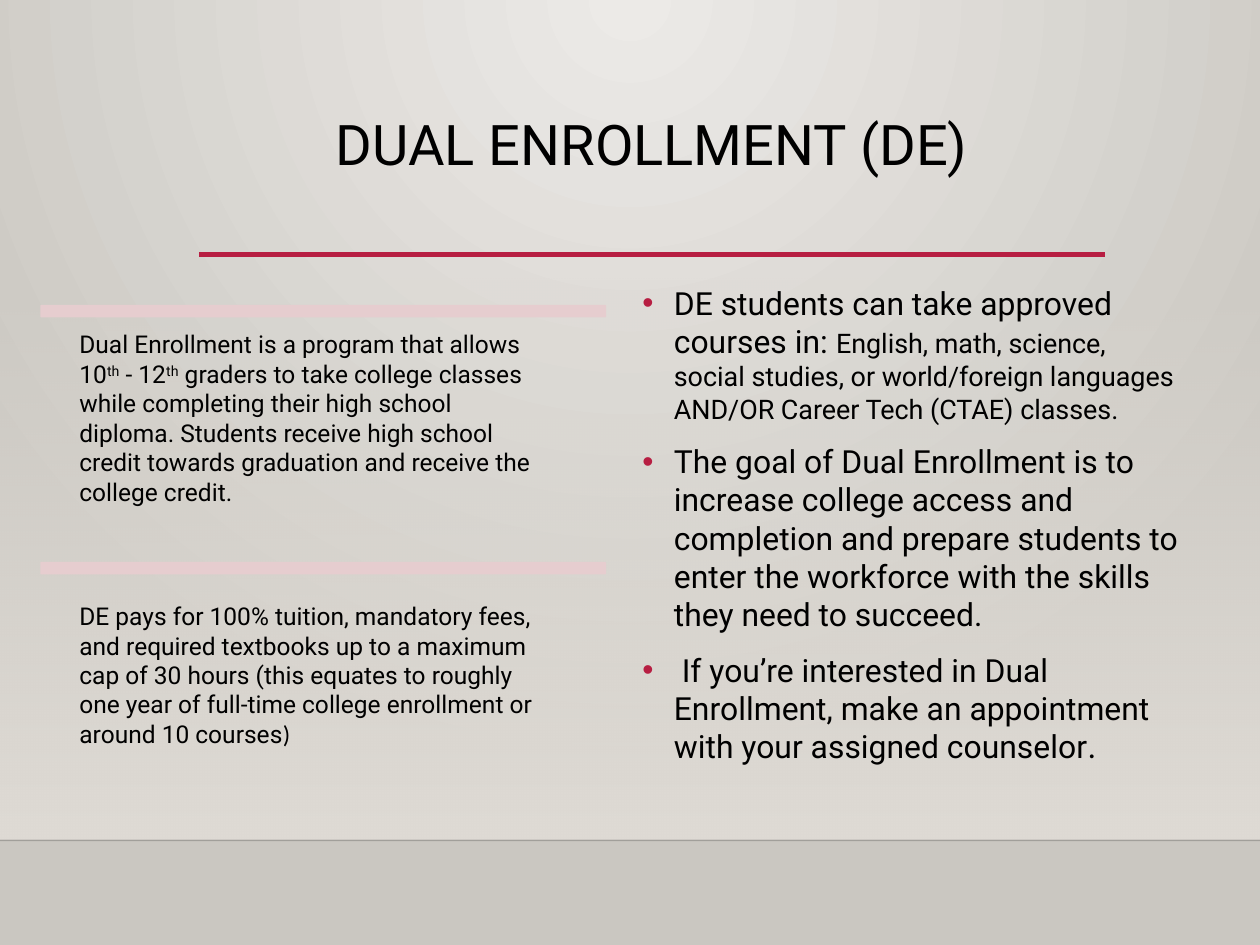
import dataclasses
import pptx
import pptx.dml.color
import pptx.enum.shapes
import pptx.enum.text
import pptx.oxml
import pptx.oxml.ns
import pptx.util


@dataclasses.dataclass(frozen=True)
class Theme:
    """Colours, fonts and type sizes of the slide."""
    ink: str = "000000"
    accent: str = "B71E42"
    bar: str = "E6CDCF"
    light: str = "ECEAE7"
    dark: str = "CAC7C1"
    wall: str = "DFDBD5"
    edge: str = "000001"
    font: str = "Roboto"
    alt: str = "Calibri"
    title: float = 32
    note: float = 14
    body: float = 18.2
    small: float = 15.4


THEME = Theme()
NOTES = [
    [("Dual Enrollment is a program that allows 10", {}), ("th", {"rise": 30}),
     (" - 12", {}), ("th", {"rise": 30}),
     (" graders to take college classes while completing their high school diploma. "
      "Students receive high school credit towards graduation and receive the college credit.", {})],
    [("DE pays for 100% tuition, mandatory fees, and required textbooks up to a maximum cap of "
      "30 hours (this equates to roughly one year of full-time college enrollment or around "
      "10 courses", {}), (")", {"font": THEME.alt})],
]
POINTS = [
    [("DE students can take approved courses in: ", {}),
     ("English, math, science, social studies, or world/foreign languages AND/OR Career Tech "
      "(CTAE) classes.", {"size": THEME.small})],
    [("The goal of Dual Enrollment is to increase college access and completion and prepare "
      "students to enter the workforce with the skills they need to succeed.", {})],
    [(" If you’re interested in Dual Enrollment, make an appointment with your assigned "
      "counselor", {}), (".", {"font": THEME.alt})],
]


def px(count):
    """Turn px, 100 to the inch, into EMU."""
    return pptx.util.Emu(count * 9144)


def rgb(code):
    """Turn a hex code into a colour."""
    return pptx.dml.color.RGBColor.from_string(code)


def xml(text):
    """Build a DrawingML element from its markup."""
    space = pptx.oxml.ns.nsdecls("a")
    return pptx.oxml.parse_xml(text.replace(">", f" {space}>", 1))


def blend(root, stops, shade):
    """Swap the solid fill under root for a gradient."""
    marks = "".join(
        f'<a:gs pos="{at * 1000}"><a:srgbClr val="{code}"><a:alpha val="{alpha * 1000}"/>'
        f'</a:srgbClr></a:gs>' for at, code, alpha in stops)
    fill = root.xpath(".//a:solidFill")[0]
    fill.getparent().replace(fill, xml(
        f'<a:gradFill rotWithShape="1"><a:gsLst>{marks}</a:gsLst>{shade}</a:gradFill>'))


def block(slide, box, kind, code):
    """Draw a flat shape without outline."""
    shape = slide.shapes.add_shape(kind, *map(px, box))
    shape.shadow.inherit = False
    shape.fill.solid()
    shape.fill.fore_color.rgb = rgb(code)
    shape.line.fill.background()
    return shape


def rule(slide, left, top, width, code, weight):
    """Draw a level line."""
    line = slide.shapes.add_connector(
        pptx.enum.shapes.MSO_CONNECTOR.STRAIGHT, px(left), px(top), px(left + width), px(top))
    line.line.color.rgb = rgb(code)
    line.line.width = pptx.util.Pt(weight)
    line.element.spPr.append(xml("<a:effectLst></a:effectLst>"))
    return line


def frame(slide, box, pad, anchor):
    """Add a wrapping text box and return its text frame."""
    text = slide.shapes.add_textbox(*map(px, box)).text_frame
    text.word_wrap = True
    text.vertical_anchor = anchor
    text.margin_left = text.margin_right = px(pad[0])
    text.margin_top = text.margin_bottom = px(pad[1])
    return text


def write(para, runs, size):
    """Add runs to a paragraph, each with its own changes."""
    for words, change in runs:
        run = para.add_run()
        run.text = words
        run.font.size = pptx.util.Pt(change.get("size", size))
        run.font.name = change.get("font", THEME.font)
        run.font.color.rgb = rgb(THEME.ink)
        if "rise" in change:
            run.font._element.set("baseline", str(change["rise"] * 1000))


def room(slide, box):
    """Paint the backdrop: glow, wall and floor edge."""
    left, top, width, height = box
    slide.background.fill.solid()
    blend(slide.element, [(0, THEME.light, 100), (100, THEME.dark, 100)],
          '<a:path path="circle"><a:fillToRect l="43000" t="0" r="43000" b="100000"/></a:path>')
    wall = block(slide, (left, top + 220, width, 446),
                 pptx.enum.shapes.MSO_SHAPE.RECTANGLE, THEME.wall)
    blend(wall.element, [(0, THEME.wall, 0), (100, THEME.wall, 100)],
          '<a:lin ang="5400000" scaled="0"/>')
    edge = rule(slide, left, top + 667, width, THEME.edge, 1)
    edge.element.xpath(".//a:ln//a:srgbClr")[0].append(xml('<a:alpha val="20000"></a:alpha>'))


def head(slide, box):
    """Place the title and the rule below it."""
    left, top, width, height = box
    rule(slide, left, top + height - 2, width, THEME.accent, 2.5)
    text = frame(slide, box, (10, 5), pptx.enum.text.MSO_ANCHOR.TOP)
    para = text.paragraphs[0]
    para.alignment = pptx.enum.text.PP_ALIGN.CENTER
    para.line_spacing = 0.9
    write(para, [("DUAL ENROLLMENT (DE)", {})], THEME.title)


def notes(slide, box):
    """Stack the notes, each under its bar."""
    left, top, width, height = box
    for row, runs in enumerate(NOTES):
        place = top + row * 204
        bar = block(slide, (left, place, width, 10),
                    pptx.enum.shapes.MSO_SHAPE.ROUNDED_RECTANGLE, THEME.bar)
        bar.adjustments[0] = 0.1
        text = frame(slide, (left + 12, place, width - 42, height - 204), (19, 19),
                     pptx.enum.text.MSO_ANCHOR.MIDDLE)
        write(text.paragraphs[0], runs, THEME.note)


def points(slide, box):
    """List the bulleted points."""
    text = frame(slide, box, (10, 5), pptx.enum.text.MSO_ANCHOR.TOP)
    for row, runs in enumerate(POINTS):
        para = text.add_paragraph() if row else text.paragraphs[0]
        if row:
            para.space_before = pptx.util.Pt(10)
        props = para._p.get_or_add_pPr()
        props.set("marL", str(px(25)))
        props.set("indent", str(px(-25)))
        props.append(xml(f'<a:buClr><a:srgbClr val="{THEME.accent}"/></a:buClr>'))
        props.append(xml('<a:buFont typeface="Arial"></a:buFont>'))
        props.append(xml('<a:buChar char="•"></a:buChar>'))
        write(para, runs, THEME.body)


def main():
    """Build the slide and save it."""
    deck = pptx.Presentation()
    deck.slide_width, deck.slide_height = px(1000), px(750)
    slide = deck.slides.add_slide(deck.slide_layouts[6])
    room(slide, (0, 0, 1000, 750))
    head(slide, (158, 88, 719, 116))
    notes(slide, (32, 242, 449, 383))
    points(slide, (500, 220, 449, 433))
    deck.save("out.pptx")


if __name__ == "__main__":
    main()
